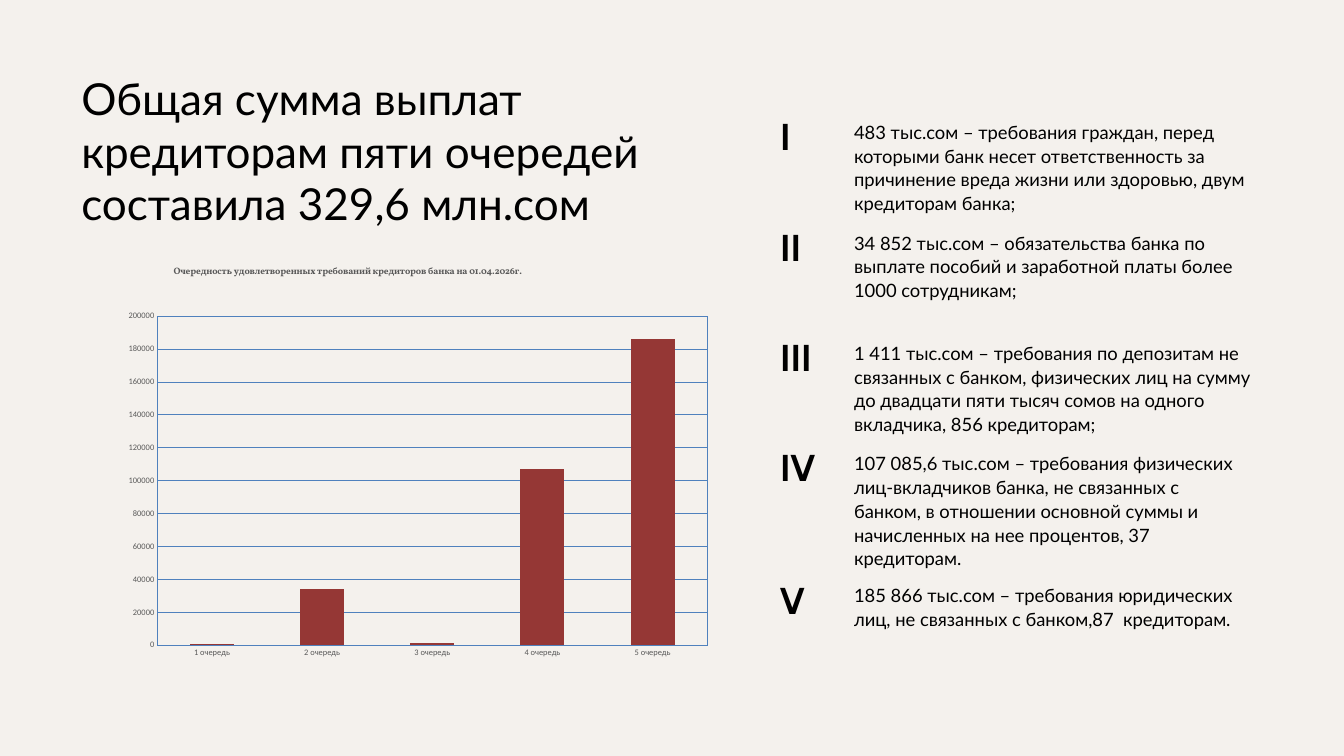
from lxml import etree
from pptx import Presentation
from pptx.chart.data import CategoryChartData
from pptx.dml.color import RGBColor
from pptx.enum.chart import XL_CHART_TYPE, XL_TICK_MARK
from pptx.enum.text import MSO_ANCHOR, MSO_AUTO_SIZE, PP_ALIGN
from pptx.oxml import parse_xml
from pptx.oxml.ns import nsdecls, qn
from pptx.util import Inches, Pt

COLUMN_STACKED = XL_CHART_TYPE.COLUMN_STACKED
NO_TICK = XL_TICK_MARK.NONE
TOP = MSO_ANCHOR.TOP
GROW = MSO_AUTO_SIZE.SHAPE_TO_FIT_TEXT
LEFT = PP_ALIGN.LEFT

CREAM = RGBColor(0xF4, 0xF1, 0xED)
BLACK = RGBColor(0, 0, 0)
GRAY = RGBColor(0x59, 0x59, 0x59)
BLUE = RGBColor(0x4F, 0x81, 0xBD)
RED = RGBColor(0x95, 0x37, 0x35)

TITLE_STYLE = {"name": "Lato", "size": Pt(47.2), "bold": False}
NUMERAL_STYLE = {"name": "Cabin", "size": Pt(40), "bold": True}
BODY_STYLE = {"name": "Lato", "size": Pt(19.7), "bold": False}
FRAME_FORMAT = {
    "margin_left": 0, "margin_top": 0, "margin_right": 0, "margin_bottom": 0,
    "word_wrap": True, "vertical_anchor": TOP, "auto_size": GROW,
}


def fill_box(box, position, text, style, line_spacing):
    """Place a text shape and format its single paragraph."""
    box.left, box.top, box.width, box.height = [Inches(v) for v in position]
    frame = box.text_frame
    for name, value in FRAME_FORMAT.items():
        setattr(frame, name, value)
    para = frame.paragraphs[0]
    para.alignment = LEFT
    para.line_spacing = Pt(line_spacing)
    span = para.add_run()
    span.text = text
    for name, value in style.items():
        setattr(span.font, name, value)
    span.font.color.rgb = BLACK


def set_layout(parent, index, values):
    """Give a chart part a manual layout, in fractions of the chart."""
    for old in parent.findall(qn("c:layout")):
        parent.remove(old)
    layout = etree.Element(qn("c:layout"))
    manual = etree.SubElement(layout, qn("c:manualLayout"))
    for tag, value in values.items():
        etree.SubElement(manual, qn(f"c:{tag}")).set("val", str(value))
    parent.insert(index, layout)


deck = Presentation()
deck.slide_width = Inches(20)
deck.slide_height = Inches(11.25)
slide = deck.slides.add_slide(deck.slide_layouts[5])
slide.background.fill.solid()
slide.background.fill.fore_color.rgb = CREAM

fill_box(slide.shapes.title, (1.21, 1.06, 8.96, 2.35),
         "Общая сумма выплат кредиторам пяти очередей составила 329,6 млн.сом",
         TITLE_STYLE, 56.6)

# Creditor queues: numeral, top, number of text lines, text
queues = [
    ("I", 1.63, 4, "483 тыс.сом – требования граждан, перед которыми банк несет "
     "ответственность за причинение вреда жизни или здоровью, двум кредиторам банка;"),
    ("II", 3.28, 3, "34 852 тыс.сом – обязательства банка по выплате пособий и "
     "заработной платы более 1000 сотрудникам;"),
    ("III", 4.92, 4, "1 411 тыс.сом – требования по депозитам не связанных с банком, "
     "физических лиц на сумму до двадцати пяти тысяч сомов на одного вкладчика, "
     "856 кредиторам;"),
    ("IV", 6.56, 5, "107 085,6 тыс.сом – требования физических лиц-вкладчиков банка, "
     "не связанных с банком, в отношении основной суммы и начисленных на нее "
     "процентов, 37 кредиторам."),
    ("V", 8.53, 2, "185 866 тыс.сом – требования юридических лиц, не связанных "
     "с банком,87  кредиторам."),
]
for numeral, top, line_count, text in queues:
    numeral_box = slide.shapes.add_textbox(0, 0, 0, 0)
    fill_box(numeral_box, (11.61, top, 0.84, 0.72), numeral, NUMERAL_STYLE, 52)
    text_box = slide.shapes.add_textbox(0, 0, 0, 0)
    fill_box(text_box, (12.71, top + 0.14, 5.9, line_count * 25.6 / 72),
             text, BODY_STYLE, 25.6)

# Payments chart
data = CategoryChartData()
data.categories = [f"{number} очередь" for number in range(1, 6)]
data.add_series("Series 1", (500, 34000, 1000, 107000, 186000))
chart = slide.shapes.add_chart(
    COLUMN_STACKED, Inches(1.21), Inches(3.79), Inches(9.62), Inches(6.4), data).chart
chart.has_legend = False
chart.font.name = "Calibri"
chart.font.size = Pt(10)
chart.font.color.rgb = BLACK

title_para = chart.chart_title.text_frame.paragraphs[0]
title_span = title_para.add_run()
title_span.text = "Очередность удовлетворенных требований кредиторов банка на 01.04.2026г."
for name, value in {"name": "Vollkorn", "size": Pt(10), "bold": True}.items():
    setattr(title_span.font, name, value)
title_span.font.color.rgb = GRAY
title_element = chart.element.xpath("c:chart/c:title")[0]
set_layout(title_element, 1, {"xMode": "edge", "yMode": "edge", "x": 0.14, "y": 0.02})

columns = chart.plots[0]
columns.gap_width = 150
columns.overlap = 100
columns.vary_by_categories = False
series = columns.series[0]
series.format.fill.solid()
series.format.fill.fore_color.rgb = RED

for axis in (chart.category_axis, chart.value_axis):
    axis.major_tick_mark = NO_TICK
    axis.minor_tick_mark = NO_TICK
    axis.format.line.fill.background()
    axis.tick_labels.font.name = "Calibri"
    axis.tick_labels.font.size = Pt(9)
    axis.tick_labels.font.color.rgb = GRAY

amounts = chart.value_axis
amounts.minimum_scale = 0
amounts.maximum_scale = 200000
amounts.major_unit = 20000
amounts.tick_labels.number_format = "General"
amounts.tick_labels.number_format_is_linked = False
amounts.has_major_gridlines = True
amounts.major_gridlines.format.line.color.rgb = BLUE
amounts.major_gridlines.format.line.width = Pt(0.75)

plot_area = chart.element.xpath("c:chart/c:plotArea")[0]
set_layout(plot_area, 0, {
    "layoutTarget": "inner", "xMode": "edge", "yMode": "edge",
    "x": 0.117, "y": 0.143, "w": 0.852, "h": 0.765,
})
plot_area.append(parse_xml(
    f'<c:spPr {nsdecls("c", "a")}><a:noFill/><a:ln w="{Pt(0.75)}"><a:solidFill>'
    f'<a:srgbClr val="{BLUE}"/></a:solidFill></a:ln></c:spPr>'))

deck.save("out.pptx")
